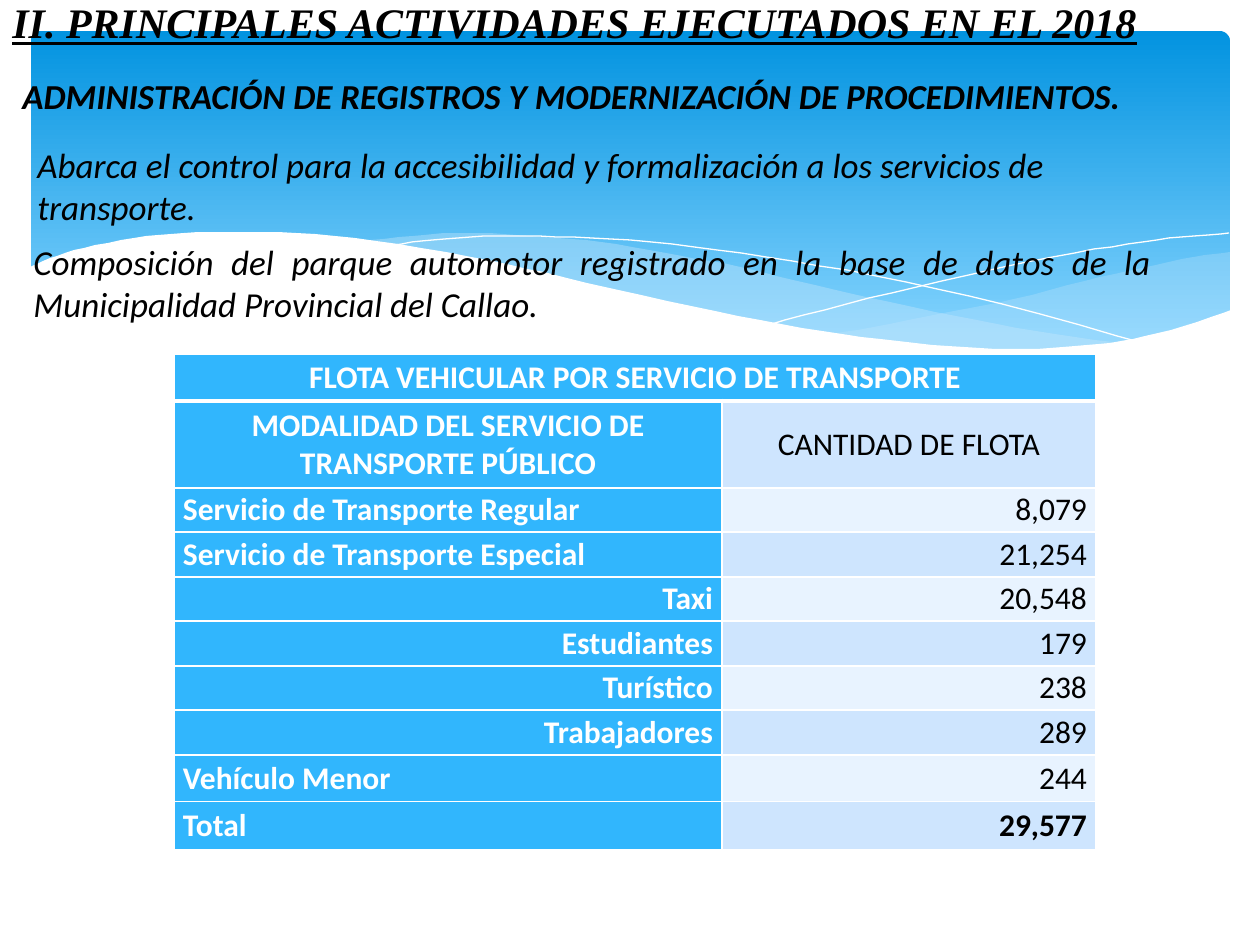
from typing import NamedTuple

from pptx import Presentation
from pptx.dml.color import RGBColor
from pptx.enum.shapes import MSO_SHAPE
from pptx.enum.text import MSO_ANCHOR as ANCHOR, PP_ALIGN as AL
from pptx.oxml import parse_xml
from pptx.oxml.ns import nsdecls, qn
from pptx.util import Emu, Pt

PX = 914400 / 126
BLACK = RGBColor(0x00, 0x00, 0x00)
WHITE = RGBColor(0xFF, 0xFF, 0xFF)
SKY_TOP = RGBColor(0x02, 0x93, 0xE0)
SKY_LOW = RGBColor(0x83, 0xD3, 0xFE)
MIST = RGBColor(0xC6, 0xE7, 0xFC)
LABEL_BLUE = RGBColor(0x31, 0xB6, 0xFD)
BANDS = (RGBColor(0xCE, 0xE5, 0xFE), RGBColor(0xE8, 0xF3, 0xFF))

Points = list[tuple[float, float]]


class Wave(NamedTuple):
    edges: list[Points]          # smooth edges, joined by straight sides
    fill: RGBColor | None = None
    alpha: int = 100


class Text(NamedTuple):
    box: tuple[int, int, int, int]
    text: str
    fmt: dict
    align: AL = AL.LEFT
    anchor: ANCHOR = ANCHOR.TOP


class Row(NamedTuple):
    height: int
    label: str
    value: str
    label_align: AL = AL.LEFT
    value_align: AL = AL.RIGHT
    value_bold: bool = False


WAVES = [
    Wave([[(833, 334), (890, 324), (949, 312), (1014, 299), (1085, 281), (1142, 268),
           (1194, 257), (1230, 252)],
          [(1230, 311), (1196, 324), (1160, 334), (1110, 344), (1052, 349), (1012, 350),
           (954, 348), (906, 343), (833, 334)]], MIST, 29),
    Wave([[(360, 241), (413, 236), (455, 233), (503, 234), (557, 238), (616, 244), (682, 256),
           (736, 266), (793, 280), (890, 302), (977, 320), (1055, 334), (1125, 344)],
          [(1125, 344), (1080, 349), (1031, 350), (974, 349), (910, 345), (838, 335),
           (757, 321), (668, 302), (566, 280), (483, 261), (407, 247), (360, 241)]], MIST, 40),
    Wave([[(389, 246), (422, 241), (471, 237), (524, 236), (591, 238), (672, 244), (766, 257),
           (876, 276), (1002, 304), (1143, 343)]]),
    Wave([[(772, 324), (847, 304), (942, 281), (1053, 257), (1128, 244), (1182, 237),
           (1229, 233)]]),
    Wave([[(29, 268), (50, 258), (84, 248), (134, 238), (184, 233), (243, 232), (315, 234),
           (398, 244), (493, 261), (563, 277), (667, 301), (760, 320), (842, 334), (915, 343),
           (980, 348), (1037, 349), (1087, 345), (1133, 339), (1184, 326), (1231, 310)],
          [(1231, 415), (29, 415)]], WHITE),
]

BODY = dict(name="Calibri", size=Pt(20), italic=True)
TEXTS = [
    Text((10, 68, 1160, 67),
         "ADMINISTRACIÓN DE REGISTROS Y MODERNIZACIÓN DE PROCEDIMIENTOS.",
         BODY | dict(bold=True), AL.JUSTIFY),
    Text((25, 137, 1131, 97), "Abarca el control para la accesibilidad y formalización "
         "a los servicios de transporte.", BODY),
    Text((21, 234, 1143, 97), "Composición del parque automotor registrado en la base de "
         "datos de la Municipalidad Provincial del Callao.", BODY, AL.JUSTIFY),
    Text((0, -24, 1211, 92), "II. PRINCIPALES ACTIVIDADES EJECUTADOS EN EL 2018",
         dict(name="Times New Roman", size=Pt(24), bold=True, italic=True, underline=True),
         anchor=ANCHOR.MIDDLE),
]

TABLE_AT = (174, 354)
COLUMNS = (548, 374)
TITLE_HEIGHT = 47
TABLE_TITLE = "FLOTA VEHICULAR POR SERVICIO DE TRANSPORTE"
ROWS = [
    Row(87, "MODALIDAD DEL SERVICIO DE TRANSPORTE PÚBLICO", "CANTIDAD DE FLOTA",
        AL.CENTER, AL.CENTER),
    Row(44, "Servicio de Transporte Regular", "8,079"),
    Row(45, "Servicio de Transporte Especial", "21,254"),
    Row(44, "Taxi", "20,548", AL.RIGHT),
    Row(45, "Estudiantes", "179", AL.RIGHT),
    Row(44, "Turístico", "238", AL.RIGHT),
    Row(45, "Trabajadores", "289", AL.RIGHT),
    Row(47, "Vehículo Menor", "244"),
    Row(48, "Total", "29,577", value_bold=True),
]


def px(n: float) -> Emu:
    return Emu(round(n * PX))


def smooth(knots: Points, steps: int = 4) -> Points:
    """Catmull-Rom curve through the knots."""
    padded = [knots[0], *knots, knots[-1]]
    curve = [knots[0]]
    for a, b, c, d in zip(padded, padded[1:], padded[2:], padded[3:]):
        for t in (i / steps for i in range(1, steps + 1)):
            curve.append(tuple(
                q + (r - p) * t / 2 + (2 * p - 5 * q + 4 * r - s) * t**2 / 2
                + (3 * q - p - 3 * r + s) * t**3 / 2
                for p, q, r, s in zip(a, b, c, d)))
    return curve


def write(tf, text: str, fmt: dict, align: AL, color: RGBColor) -> None:
    p = tf.paragraphs[0]
    p.alignment = align
    r = p.add_run()
    r.text = text
    for key, value in fmt.items():
        setattr(r.font, key, value)
    r.font.color.rgb = color


def draw_sky(s) -> None:
    sp = s.shapes.add_shape(MSO_SHAPE.ROUNDED_RECTANGLE, px(31), px(31), px(1199), px(340))
    sp.adjustments[0] = 0.03
    sp.shadow.inherit = False
    sp.line.fill.background()
    sp.fill.gradient()
    sp.fill.gradient_angle = 270
    for stop, color, pos in zip(sp.fill.gradient_stops, (SKY_TOP, SKY_LOW), (0, 0.9)):
        stop.color.rgb = color
        stop.position = pos


def draw_wave(s, wave: Wave) -> None:
    points = [pt for edge in wave.edges for pt in smooth(edge)]
    builder = s.shapes.build_freeform(*points[0], scale=PX)
    builder.add_line_segments(points[1:], close=wave.fill is not None)
    sp = builder.convert_to_shape()
    sp.shadow.inherit = False
    if wave.fill is None:
        sp.fill.background()
        sp.line.color.rgb = WHITE
        sp.line.width = Pt(0)
        return
    sp.line.fill.background()
    sp.fill.solid()
    sp.fill.fore_color.rgb = wave.fill
    if wave.alpha < 100:
        color = sp._element.spPr.find(qn("a:solidFill"))[0]
        color.append(parse_xml(f'<a:alpha {nsdecls("a")} val="{wave.alpha * 1000}"/>'))


def draw_text(s, t: Text) -> None:
    tf = s.shapes.add_textbox(*map(px, t.box)).text_frame
    tf.word_wrap = True
    tf.vertical_anchor = t.anchor
    write(tf, t.text, t.fmt, t.align, BLACK)


def fill_cell(cell, text: str, align: AL, fill: RGBColor, color: RGBColor, bold: bool,
              top: int = 1, bottom: int = 1) -> None:
    margins = dict(margin_left=px(9), margin_right=px(9), margin_top=0, margin_bottom=0)
    for key, value in (margins | dict(vertical_anchor=ANCHOR.MIDDLE)).items():
        setattr(cell, key, value)
    tcPr = cell._tc.get_or_add_tcPr()
    for side, width in dict(L=1, R=1, T=top, B=bottom).items():
        tcPr.append(parse_xml(
            f'<a:ln{side} {nsdecls("a")} w="{Pt(width)}"><a:solidFill>'
            f'<a:srgbClr val="{WHITE}"/></a:solidFill></a:ln{side}>'))
    cell.fill.solid()
    cell.fill.fore_color.rgb = fill
    write(cell.text_frame, text, dict(name="Calibri", size=Pt(18), bold=bold), align, color)


def draw_table(s) -> None:
    heights = [TITLE_HEIGHT, *(row.height for row in ROWS)]
    table = s.shapes.add_table(len(heights), len(COLUMNS), *map(px, TABLE_AT),
                               px(sum(COLUMNS)), px(sum(heights))).table
    for column, width in zip(table.columns, COLUMNS):
        column.width = px(width)
    for line, height in zip(table.rows, heights):
        line.height = px(height)
    # Title across both columns
    table.cell(0, 0).merge(table.cell(0, 1))
    fill_cell(table.cell(0, 0), TABLE_TITLE, AL.CENTER, LABEL_BLUE, WHITE, True, bottom=3)
    for i, row in enumerate(ROWS):
        top = 3 if i == 0 else 1
        fill_cell(table.cell(i + 1, 0), row.label, row.label_align, LABEL_BLUE, WHITE, True, top)
        fill_cell(table.cell(i + 1, 1), row.value, row.value_align, BANDS[i % 2], BLACK,
                  row.value_bold, top)


def main() -> None:
    prs = Presentation()
    prs.slide_width, prs.slide_height = px(1260), px(945)
    s = prs.slides.add_slide(prs.slide_layouts[6])
    # Background
    draw_sky(s)
    for wave in WAVES:
        draw_wave(s, wave)
    # Content
    for t in TEXTS:
        draw_text(s, t)
    draw_table(s)
    prs.save("out.pptx")


if __name__ == "__main__":
    main()
